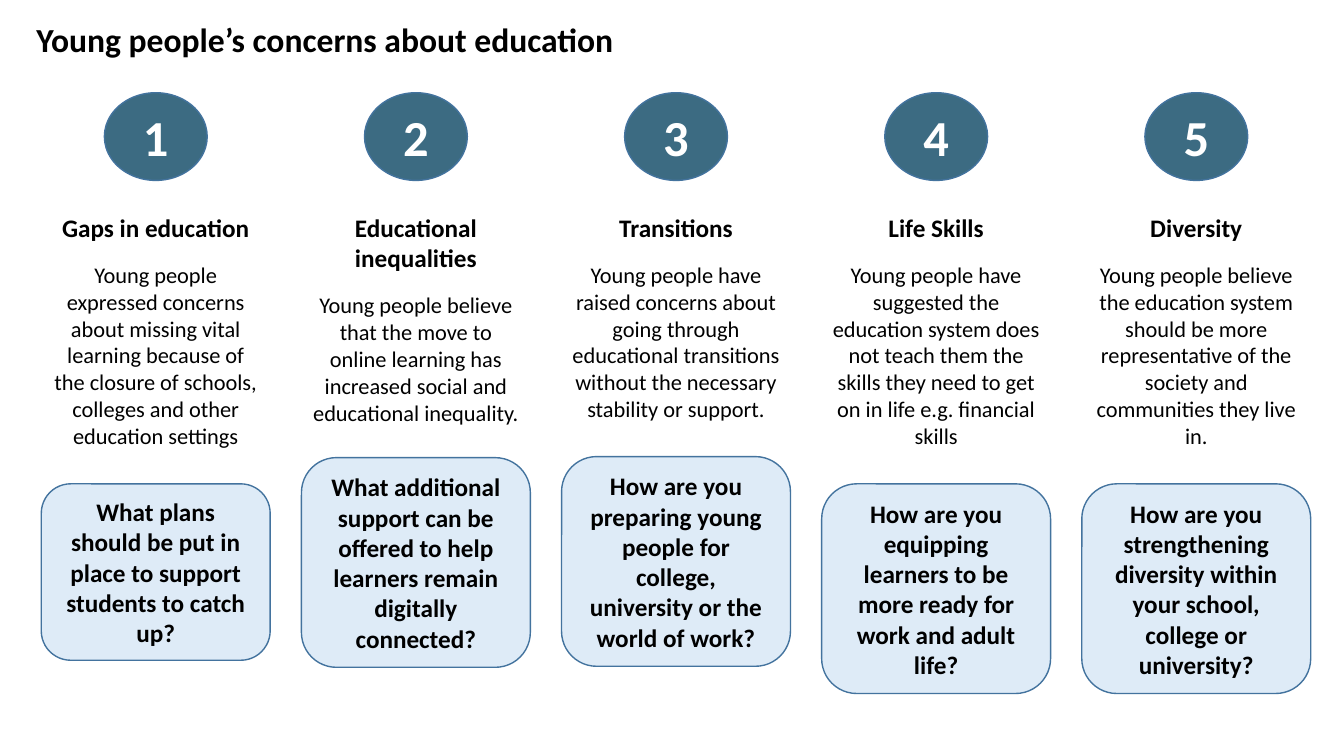
from pptx import Presentation
from pptx import util as u
from pptx.dml import color
from pptx.enum import shapes, text

FONT = "Calibri"
BLACK, WHITE = "000000", "FFFFFF"
TEAL, PALE_BLUE, OUTLINE = "3C6B82", "DEEBF7", "43739E"

FIRST_COLUMN, COLUMN_STEP, COLUMN_WIDTH = 0.41, 2.58, 2.27
NUMBER_TOP, NUMBER_WIDTH, NUMBER_HEIGHT = 0.92, 1.02, 0.87
CONCERN_TOP = 2.06
HEADING_GAP = 13

# (heading, concern, concern height, question, question top, question height)
CONCERNS = [
    ("Gaps in education",
     "Young people expressed concerns about missing vital learning because of "
     "the closure of schools, colleges and other education settings", 2.47,
     "What plans should be put in place to support students to catch up?", 4.8, 1.75),
    ("Educational inequalities",
     "Young people believe that the move to online learning has increased "
     "social and educational inequality.", 2.23,
     "What additional support can be offered to help learners remain digitally connected?",
     4.54, 2.08),
    ("Transitions",
     "Young people have raised concerns about going through educational "
     "transitions without the necessary stability or support.", 2.2,
     "How are you preparing young people for college, university or the world of work?",
     4.53, 2.08),
    ("Life Skills",
     "Young people have suggested the education system does not teach them the "
     "skills they need to get on in life e.g. financial skills", 2.47,
     "How are you equipping learners to be more ready for work and adult life?", 4.8, 2.08),
    ("Diversity",
     "Young people believe the education system should be more representative "
     "of the society and communities they live in.", 2.47,
     "How are you strengthening diversity within your school, college or university?",
     4.8, 2.08),
]


def rgb(value):
    """Turn a hex string into a colour."""
    return color.RGBColor.from_string(value)


def format_paragraph(paragraph, size, bold=True, fill=BLACK, align=text.PP_ALIGN.CENTER):
    """Align a paragraph and set the font of its runs."""
    paragraph.alignment = align
    for run in paragraph.runs:
        run.font.name = FONT
        run.font.size = u.Pt(size)
        run.font.bold = bold
        run.font.color.rgb = rgb(fill)


def set_title(slide, wording):
    """Fill and place the title placeholder."""
    title = slide.shapes.title
    title.left, title.top = u.Inches(0.26), u.Inches(0.14)
    title.width, title.height = u.Inches(12.48), u.Inches(0.5)
    frame = title.text_frame
    frame.text = wording
    frame.auto_size = text.MSO_AUTO_SIZE.NONE
    frame.vertical_anchor = text.MSO_ANCHOR.TOP
    format_paragraph(frame.paragraphs[0], 24, align=text.PP_ALIGN.LEFT)


def add_label_shape(slide, kind, box, wording, size, fill, font_fill):
    """Add an outlined preset shape with centred bold text."""
    shape = slide.shapes.add_shape(kind, *map(u.Inches, box))
    shape.shadow.inherit = False
    shape.fill.solid()
    shape.fill.fore_color.rgb = rgb(fill)
    shape.line.color.rgb = rgb(OUTLINE)
    shape.line.width = u.Pt(1)
    frame = shape.text_frame
    frame.text = wording
    frame.word_wrap = True
    frame.vertical_anchor = text.MSO_ANCHOR.MIDDLE
    format_paragraph(frame.paragraphs[0], size, fill=font_fill)


def add_concern_text(slide, box, heading, concern):
    """Add a bold heading with a plain description below it."""
    frame = slide.shapes.add_textbox(*map(u.Inches, box)).text_frame
    frame.word_wrap = True
    frame.text = heading
    format_paragraph(frame.paragraphs[0], 18)
    paragraph = frame.add_paragraph()
    paragraph.text = concern
    paragraph.space_before = u.Pt(HEADING_GAP)
    format_paragraph(paragraph, 16, bold=False)


def add_column(slide, index, heading, concern, concern_height, question, top, height):
    """Add one numbered concern with its question."""
    left = FIRST_COLUMN + index * COLUMN_STEP
    number_left = left + (COLUMN_WIDTH - NUMBER_WIDTH) / 2
    add_label_shape(slide, shapes.MSO_SHAPE.OVAL,
                    (number_left, NUMBER_TOP, NUMBER_WIDTH, NUMBER_HEIGHT),
                    str(index + 1), 36, TEAL, WHITE)
    add_concern_text(slide, (left, CONCERN_TOP, COLUMN_WIDTH, concern_height),
                     heading, concern)
    add_label_shape(slide, shapes.MSO_SHAPE.ROUNDED_RECTANGLE,
                    (left, top, COLUMN_WIDTH, height), question, 18, PALE_BLUE, BLACK)


def main():
    """Build the slide and save it."""
    presentation = Presentation()
    presentation.slide_width = u.Inches(13.33)
    presentation.slide_height = u.Inches(7.5)
    slide = presentation.slides.add_slide(presentation.slide_layouts[5])
    set_title(slide, "Young people’s concerns about education")
    for index, column in enumerate(CONCERNS):
        add_column(slide, index, *column)
    presentation.save("out.pptx")


if __name__ == "__main__":
    main()
